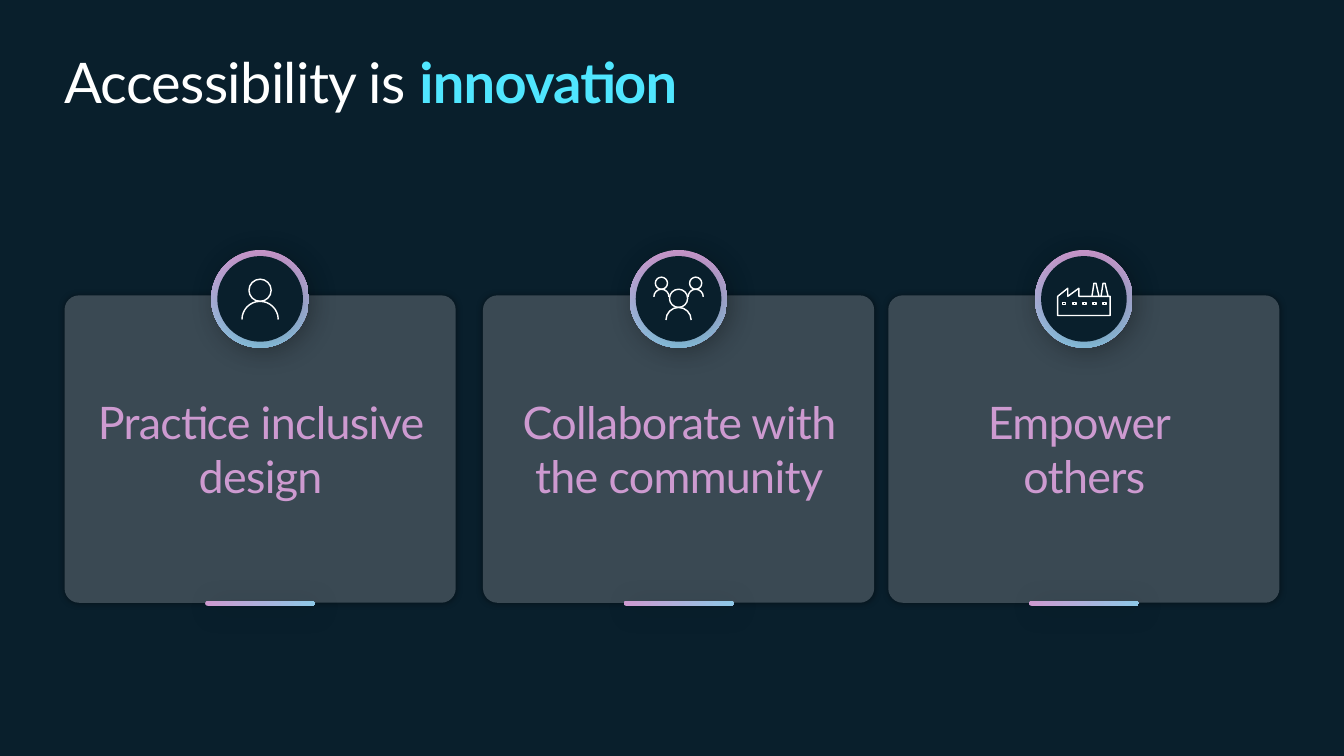
"""Build the slide 'Accessibility is innovation' with three icon cards."""
import math
from dataclasses import dataclass

from lxml import etree
from pptx import Presentation
from pptx.dml.color import RGBColor
from pptx.enum.shapes import MSO_SHAPE
from pptx.enum.text import MSO_ANCHOR, PP_ALIGN
from pptx.oxml.ns import qn
from pptx.util import Inches, Pt

ROUND_RECT = MSO_SHAPE.ROUNDED_RECTANGLE
OVAL = MSO_SHAPE.OVAL
MIDDLE = MSO_ANCHOR.MIDDLE
LEFT, CENTER = PP_ALIGN.LEFT, PP_ALIGN.CENTER


@dataclass(frozen=True)
class Theme:
    """Colours, font and sizes of the slide."""
    font: str = "Lato"
    back: str = "091F2C"
    card: str = "3A4953"
    white: str = "FFFFFF"
    accent: str = "50E6FF"
    pink: str = "CD9AD0"
    blue: str = "8EC8E8"
    title_size: float = 40
    card_size: float = 32
    icon_line: float = 1.03
    spacing: str = "-50"


THEME = Theme()
CARD_TOP, CARD_W, CARD_H = 2.93, 3.88, 3.05
BADGE_Y = 2.965
CARD_SHADOW = (40, 5, 0, 0)
DETAIL_SHADOW = (20, 20, 4, 45)


def rgb(value):
    """Return a colour from its hex value."""
    return RGBColor.from_string(value)


def add_shadow(sp, alpha, blur, dist, angle):
    """Give a shape a soft black shadow."""
    sp.shadow.inherit = False
    effects = sp._element.spPr.find(qn("a:effectLst"))
    outer = etree.SubElement(effects, qn("a:outerShdw"), blurRad=str(Pt(blur)),
                             dist=str(Pt(dist)), dir=str(angle * 60000),
                             algn="ctr", rotWithShape="0")
    color = etree.SubElement(outer, qn("a:srgbClr"), val="000000")
    etree.SubElement(color, qn("a:alpha"), val=str(alpha * 1000))


def add_centred(group, kind, cx, cy, w, h, shadow, fill=None, angle=0, adj=None):
    """Add a shape around a centre, with a plain fill or the pink-blue gradient."""
    sp = group.shapes.add_shape(kind, Inches(cx - w / 2), Inches(cy - h / 2),
                                Inches(w), Inches(h))
    if fill:
        sp.fill.solid()
        sp.fill.fore_color.rgb = rgb(fill)
    else:
        sp.fill.gradient()
        sp.fill.gradient_angle = angle
        for stop, color in zip(sp.fill.gradient_stops, (THEME.pink, THEME.blue)):
            stop.color.rgb = rgb(color)
    if adj is not None:
        sp.adjustments[0] = adj
    sp.line.fill.background()
    add_shadow(sp, *shadow)


def add_text(s, x, y, w, h, paragraphs, size, align):
    """Add a text box; each paragraph lists (text, colour, bold) runs."""
    tf = s.shapes.add_textbox(Inches(x), Inches(y), Inches(w), Inches(h)).text_frame
    tf.word_wrap = True
    tf.vertical_anchor = MIDDLE
    tf.margin_left = tf.margin_right = tf.margin_top = tf.margin_bottom = 0
    for i, runs in enumerate(paragraphs):
        p = tf.add_paragraph() if i else tf.paragraphs[0]
        p.alignment = align
        for text, color, bold in runs:
            r = p.add_run()
            r.text = text
            r.font.name = THEME.font
            r.font.size = Pt(size)
            r.font.bold = bold
            r.font.color.rgb = rgb(color)
            r._r.get_or_add_rPr().set("spc", THEME.spacing)


def arc(cx, cy, radius, quarters):
    """Return a start and Bezier control points of quarter turns from the left."""
    pull = 0.5523
    points = [(cx - radius, cy)]
    for i in range(quarters):
        a = math.pi + i * math.pi / 2
        c, d = math.cos(a), math.sin(a)
        for u, v in ((c - pull * d, d + pull * c), (pull * c - d, pull * d + c), (-d, c)):
            points.append((cx + radius * u, cy + radius * v))
    return points


def person(cx, cy, head, shoulders):
    """Return a head circle and the shoulder arc that touches it."""
    return [arc(cx, cy, head, 4), arc(cx, cy + head + shoulders, shoulders, 2)]


def one_person(cx):
    """Return the strokes of the single person icon."""
    return person(cx, 2.88, 0.11, 0.18)


def community(cx):
    """Return the strokes of the three people icon."""
    strokes = person(cx, 2.96, 0.09, 0.125)
    for side in (-1, 1):
        strokes += person(cx + side * 0.17, 2.81, 0.06, 0.075)
    return strokes


def factory(cx):
    """Return the strokes of the factory icon."""
    walls = [(0.26, 2.94), (0.26, 3.13), (-0.26, 3.13), (-0.26, 2.94), (-0.16, 2.86),
             (-0.16, 2.94), (-0.05, 2.86), (-0.05, 2.94), (0.26, 2.94)]
    strokes = [walls]
    for x in (0.08, 0.17):
        strokes.append([(x + 0.07, 2.94), (x + 0.04, 2.81), (x + 0.02, 2.81), (x, 2.94)])
    for i in range(5):
        x = -0.21 + 0.1 * i
        strokes.append([(x + 0.03, 3), (x, 3), (x, 3.02), (x + 0.03, 3.02), (x + 0.03, 3)])
    return [[(cx + x, y) for x, y in stroke] for stroke in strokes]


def bend(sp):
    """Join each three line steps of a freeform into one Bezier curve."""
    steps = list(sp._element.iter(qn("a:lnTo")))
    for i in range(0, len(steps), 3):
        curve = etree.Element(qn("a:cubicBezTo"))
        steps[i].addprevious(curve)
        for step in steps[i:i + 3]:
            curve.append(step[0])
            step.getparent().remove(step)


def add_icon(s, strokes, curved):
    """Draw the strokes as one white outline."""
    lines = [[(Inches(x), Inches(y)) for x, y in stroke] for stroke in strokes]
    builder = s.shapes.build_freeform(*lines[0][0])
    for i, points in enumerate(lines):
        if i:
            builder.move_to(*points[0])
        builder.add_line_segments(points[1:], close=curved and i % 2 == 0)
    sp = builder.convert_to_shape()
    if curved:
        bend(sp)
    sp.fill.background()
    sp.line.color.rgb = rgb(THEME.white)
    sp.line.width = Pt(THEME.icon_line)
    sp.shadow.inherit = False


def add_card(s, x):
    """Add a card with its bar and round badge."""
    cx = x + CARD_W / 2
    group = s.shapes.add_group_shape()
    add_centred(group, ROUND_RECT, cx, CARD_TOP + CARD_H / 2, CARD_W, CARD_H,
                CARD_SHADOW, fill=THEME.card, adj=0.047)
    add_centred(group, ROUND_RECT, cx, 5.985, 1.09, 0.05, DETAIL_SHADOW, adj=0.5)
    add_centred(group, OVAL, cx, BADGE_Y, 0.97, 0.97, DETAIL_SHADOW, angle=270)
    add_centred(group, OVAL, cx, BADGE_Y, 0.85, 0.85, DETAIL_SHADOW, fill=THEME.back)


def main():
    """Build and save the slide."""
    prs = Presentation()
    prs.slide_width, prs.slide_height = Inches(13.33), Inches(7.5)
    s = prs.slides.add_slide(prs.slide_layouts[6])
    s.background.fill.solid()
    s.background.fill.fore_color.rgb = rgb(THEME.back)
    left, middle, right = 0.64, 4.79, 8.81
    for x in (middle, right, left):
        add_card(s, x)
    title = [("Accessibility is ", THEME.white, False), ("innovation", THEME.accent, True)]
    add_text(s, left, 0.47, 12.05, 0.67, [title], THEME.title_size, LEFT)
    cards = [(left, ["Practice inclusive design"], one_person, True),
             (middle, ["Collaborate with the community"], community, True),
             (right, ["Empower ", "others"], factory, False)]
    for x, lines, icon, curved in cards:
        add_icon(s, icon(x + CARD_W / 2), curved)
        label = [[(line, THEME.pink, False)] for line in lines]
        add_text(s, x + 0.12, 3.91, 3.65, 1.08, label, THEME.card_size, CENTER)


    prs.save("out.pptx")


if __name__ == "__main__":
    main()
